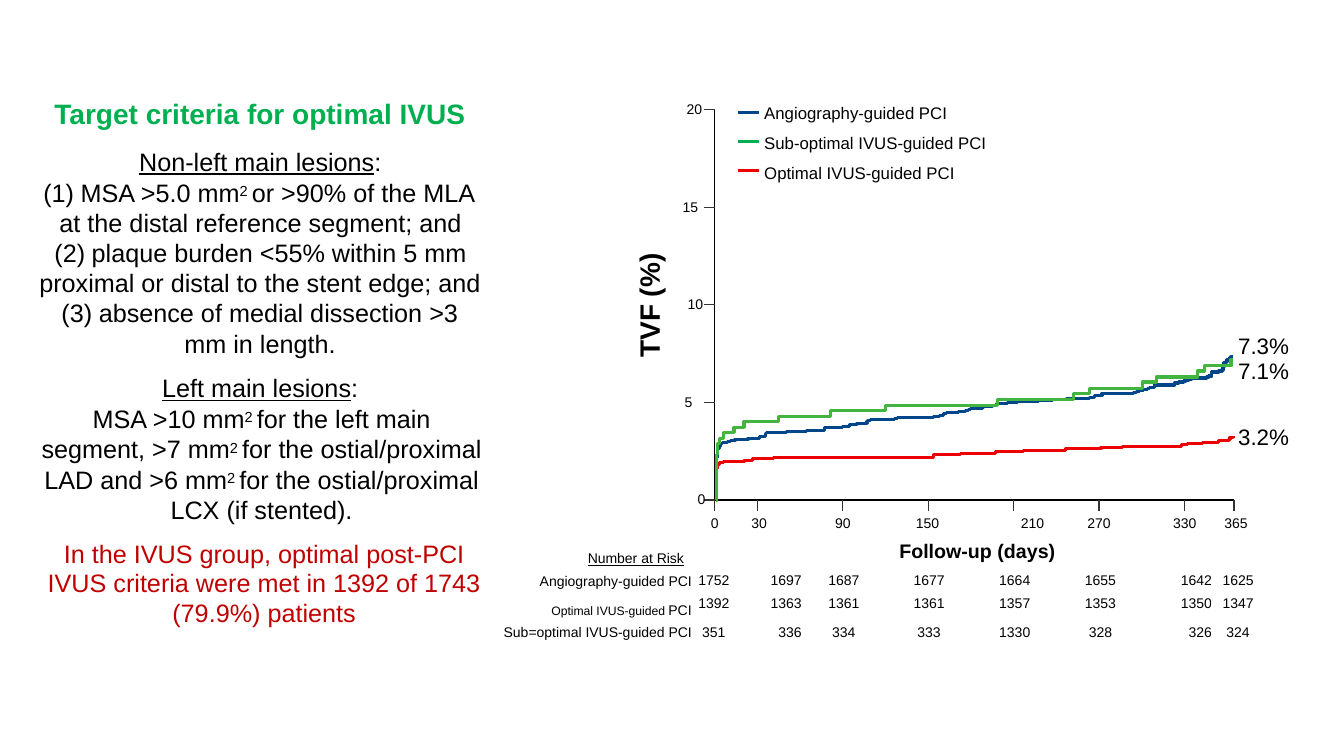
from lxml.etree import SubElement
from pptx import Presentation
from pptx.dml.color import RGBColor
from pptx.enum.shapes import MSO_CONNECTOR
from pptx.enum.text import PP_ALIGN as Align
from pptx.oxml.ns import qn
from pptx.util import Pt

PX = 9144  # EMU per px, 100 px to the inch
COLORS = {"text": "000000", "tick": "333333", "title": "00B050", "note": "C00000",
          "angio": "00468B", "suboptimal": "42B540", "suboptimal_key": "00B050",
          "optimal": "ED0000"}

UNDERLINE = {"underline": True}
SQUARED = ("2 ", {"baseline": 23})

# Each paragraph: runs, then layout (indents and tabs in px, spacing in points)
CRITERIA = [
    ([("Non-left main lesions", UNDERLINE), ":"], {"left": 103}),
    (["\tMSA >5.0 mm", SQUARED, "or >90% of the MLA at the distal reference segment; and"],
     {"left": 24, "hang": 16, "line": 1.02, "number": 1, "tabs": [24, 45]}),
    (["plaque burden <55% within 5 mm"],
     {"left": 56, "hang": 37, "line": Pt(20.9), "number": 2, "tabs": [56]}),
    (["proximal or distal to the stent edge; and"],
     {"left": 4, "line": Pt(21.2), "before": 0.5}),
    (["absence of medial dissection >3"],
     {"left": 63, "hang": 37, "line": Pt(21.2), "number": 3, "tabs": [63]}),
    (["mm in length."], {"align": Align.CENTER, "before": 0.5}),
    ([("Left main lesions", UNDERLINE), ":"], {"align": Align.CENTER, "before": 10.3}),
    (["MSA >10 mm", SQUARED, "for the left main segment, >7 mm", SQUARED,
      "for the ostial/proximal LAD and >6 mm", SQUARED,
      "for the ostial/proximal LCX (if stented)."],
     {"align": Align.CENTER, "left": 3, "line": 1.0, "before": 0.4}),
    ([("In the IVUS group, optimal post-PCI IVUS criteria were met in 1392 of 1743 "
       "(79.9%) patients", {"color": "note"})],
     {"align": Align.CENTER, "left": 8, "line": 0.99, "before": 10.4}),
]

AXIS_LEFT, AXIS_RIGHT, AXIS_TOP, AXIS_BOTTOM, TICK = 709, 1224, 109, 496, 11
Y_LABELS = [(0, 692), (5, 679), (10, 682), (15, 677), (20, 681)]  # value, label left
X_LABELS = [(0, 709), (30, 753), (90, 836), (150, 920), (210, 1024), (270, 1090),
            (330, 1175), (365, 1226)]  # day, label centre
LEGEND = [("Angiography-guided PCI", "angio", 112),
          ("Sub-optimal IVUS-guided PCI", "suboptimal_key", 140),
          ("Optimal IVUS-guided PCI", "optimal", 169)]

# Step curves: at each x the curve moves to the new y
CURVE_LEFT, CURVE_RIGHT = 710, 1223
CURVES = {
    "angio": [
        (711, 454), (712, 445), (714, 443), (715, 440), (717, 439), (722, 438), (725, 437),
        (729, 436), (742, 435), (753, 433), (759, 430), (760, 429), (780, 428), (800, 427),
        (818, 424), (836, 423), (843, 421), (850, 420), (860, 418), (861, 417), (863, 416),
        (887, 415), (890, 414), (926, 413), (932, 412), (936, 410), (939, 409), (951, 408),
        (958, 407), (961, 406), (963, 405), (974, 404), (975, 403), (984, 402), (988, 400),
        (999, 399), (1009, 398), (1030, 397), (1044, 396), (1058, 395), (1081, 394),
        (1086, 392), (1093, 390), (1124, 389), (1127, 388), (1130, 387), (1134, 386),
        (1138, 385), (1140, 384), (1145, 382), (1165, 380), (1169, 379), (1174, 378),
        (1176, 377), (1179, 376), (1182, 375), (1197, 374), (1199, 373), (1202, 369),
        (1209, 368), (1212, 367), (1213, 364), (1214, 360), (1216, 359), (1217, 357),
        (1220, 355), (1221, 354)],
    "optimal": [
        (711, 465), (712, 461), (714, 459), (718, 458), (738, 457), (746, 455), (767, 454),
        (926, 451), (953, 450), (987, 448), (1015, 447), (1057, 445), (1092, 444),
        (1113, 443), (1172, 441), (1178, 440), (1193, 439), (1209, 437), (1219, 436),
        (1220, 434), (1223, 433)],
    "suboptimal": [
        (711, 451), (712, 440), (714, 435), (718, 429), (728, 424), (738, 418), (772, 413),
        (824, 407), (878, 402), (989, 396), (1065, 390), (1081, 385), (1133, 379),
        (1147, 374), (1188, 368), (1195, 363), (1221, 357)],
}

RAISED = {"size": 15, "baseline": 3}
RISK_ROWS = [
    (["Angiography-guided PCI"], [1752, 1697, 1687, 1677, 1664, 1655, 1642, 1625]),
    ([("Optimal IVUS-guided ", RAISED), "PCI"],
     [1392, 1363, 1361, 1361, 1357, 1353, 1350, 1347]),
    (["Sub=optimal IVUS-guided PCI"], [351, 336, 334, 333, 1330, 328, 326, 324]),
]
RISK_WIDTHS = [197, 44, 65, 84, 85, 85, 85, 68, 45]
RISK_HEIGHTS = [23, 23, 24]
RISK_RIGHT_ALIGNED = (0, 2, 7)


def px(*lengths):
    return [round(length * PX) for length in lengths]


def color(name):
    return RGBColor.from_string(COLORS[name])


def fill_paragraph(paragraph, runs, base, left=0, hang=0, line=None, before=0,
                   number=None, tabs=(), align=Align.LEFT):
    """Add the runs; each is a string or a (string, style changes) pair."""
    properties = paragraph._p.get_or_add_pPr()
    properties.set("marL", str(left * PX))
    properties.set("indent", str(-hang * PX))
    if number:
        SubElement(properties, qn("a:buAutoNum"), type="arabicParenBoth", startAt=str(number))
    if tabs:
        tab_list = SubElement(properties, qn("a:tabLst"))
        for tab in tabs:
            SubElement(tab_list, qn("a:tab"), pos=str(tab * PX), algn="l")
    paragraph.alignment = align
    paragraph.space_before = Pt(before)
    if line:
        paragraph.line_spacing = line
    for item in runs:
        text, changes = (item, {}) if isinstance(item, str) else item
        style = {"color": "text", **base, **changes}
        run = paragraph.add_run()
        run.text = text
        run.font.name = "Arial"
        run.font.size = Pt(style["size"])
        run.font.color.rgb = color(style["color"])
        run.font.bold = style.get("bold", False)
        run.font.underline = style.get("underline", False)
        if "baseline" in style:
            run._r.get_or_add_rPr().set("baseline", str(style["baseline"] * 1000))


def add_text(slide, box, paragraphs, top_inset=1, vertical=None, **base):
    frame = slide.shapes.add_textbox(*px(*box)).text_frame
    frame.word_wrap = True
    frame.margin_left = frame.margin_right = frame.margin_bottom = 0
    frame.margin_top = top_inset * PX
    if vertical:
        frame._txBody.bodyPr.set("vert", vertical)
    for index, (runs, layout) in enumerate(paragraphs):
        paragraph = frame.add_paragraph() if index else frame.paragraphs[0]
        fill_paragraph(paragraph, runs, base, **layout)


def add_line(slide, x1, y1, x2, y2, color_name, width=0.85):
    line = slide.shapes.add_connector(MSO_CONNECTOR.STRAIGHT, *px(x1, y1, x2, y2))
    line.line.color.rgb = color(color_name)
    line.line.width = Pt(width)
    SubElement(line._element.spPr, qn("a:effectLst"))


def add_curve(slide, steps, color_name):
    points, level = [], AXIS_BOTTOM
    for x, y in steps:
        points += [(x, level), (x, y)]
        level = y
    points.append((CURVE_RIGHT, level))
    builder = slide.shapes.build_freeform(CURVE_LEFT, AXIS_BOTTOM, scale=PX)
    builder.add_line_segments(points, close=False)
    curve = builder.convert_to_shape()
    curve.shadow.inherit = False
    curve.fill.background()
    curve.line.color.rgb = color(color_name)
    curve.line.width = Pt(2.25)


def add_axes(slide):
    add_line(slide, AXIS_LEFT, AXIS_BOTTOM, AXIS_LEFT, AXIS_TOP, "text")
    add_line(slide, AXIS_LEFT, AXIS_BOTTOM, AXIS_RIGHT, AXIS_BOTTOM, "text")
    for value, left in Y_LABELS:
        y = AXIS_BOTTOM - (AXIS_BOTTOM - AXIS_TOP) * value / 20
        add_line(slide, AXIS_LEFT - TICK, y, AXIS_LEFT, y, "tick")
        add_text(slide, (left, y - 10, 20, 19), [([str(value)], {})], size=10)
    for day, center in X_LABELS:
        x = AXIS_LEFT + (AXIS_RIGHT - AXIS_LEFT) * day / 365
        add_line(slide, x, AXIS_BOTTOM + TICK, x, AXIS_BOTTOM, "tick")
        add_text(slide, (center - 15, 509, 30, 19),
                 [([str(day)], {"align": Align.CENTER})], size=10)


def add_risk_table(slide):
    table = slide.shapes.add_table(len(RISK_ROWS), len(RISK_WIDTHS), *px(
        489, 566, sum(RISK_WIDTHS), sum(RISK_HEIGHTS))).table
    table.first_row = table.horz_banding = False
    for column, width in zip(table.columns, RISK_WIDTHS):
        column.width = width * PX
    for row_index, (label, counts) in enumerate(RISK_ROWS):
        table.rows[row_index].height = RISK_HEIGHTS[row_index] * PX
        for index, runs in enumerate([label] + [[str(count)] for count in counts]):
            cell = table.cell(row_index, index)
            cell.fill.background()
            cell.margin_left = cell.margin_right = cell.margin_bottom = 0
            cell.margin_top = (3 if index == 0 or row_index == 2 else 2) * PX
            align = Align.RIGHT if index in RISK_RIGHT_ALIGNED else Align.CENTER
            fill_paragraph(cell.text_frame.paragraphs[0], runs, {"size": 10}, align=align,
                           left=7 if index == len(counts) else 0)


def main():
    presentation = Presentation()
    presentation.slide_width, presentation.slide_height = px(1333, 750)
    slide = presentation.slides.add_slide(presentation.slide_layouts[6])
    add_text(slide, (54, 95, 420, 36), [(["Target criteria for optimal IVUS"], {})],
             size=20, color="title", bold=True)
    add_text(slide, (35, 144, 446, 483), CRITERIA, size=18)
    add_axes(slide)
    add_text(slide, (892, 534, 170, 24), [(["Follow-up (days)"], {})], size=14, bold=True)
    add_text(slide, (628, 250, 34, 106), [(["TVF (%)"], {"left": 1, "line": Pt(23.1)})],
             top_inset=0, vertical="vert270", size=20, bold=True)
    for _, key, y in LEGEND:
        add_line(slide, 732, y, 753, y, key, 2.25)
    add_text(slide, (758, 91, 223, 90), [([label], {"before": 7 if index else 0})
                                         for index, (label, _, _) in enumerate(LEGEND)],
             top_inset=11, size=12)
    add_risk_table(slide)
    add_text(slide, (583, 544, 110, 19), [([("Number at Risk", UNDERLINE)], {})], size=10)
    add_text(slide, (1228, 331, 60, 52), [([rate], {"line": Pt(17.6)})
                                          for rate in ("7.3%", "7.1%")], size=16)
    add_text(slide, (1228, 419, 60, 29), [(["3.2%"], {})], size=16)
    for name, steps in CURVES.items():
        add_curve(slide, steps, name)
    presentation.save("out.pptx")


if __name__ == "__main__":
    main()
